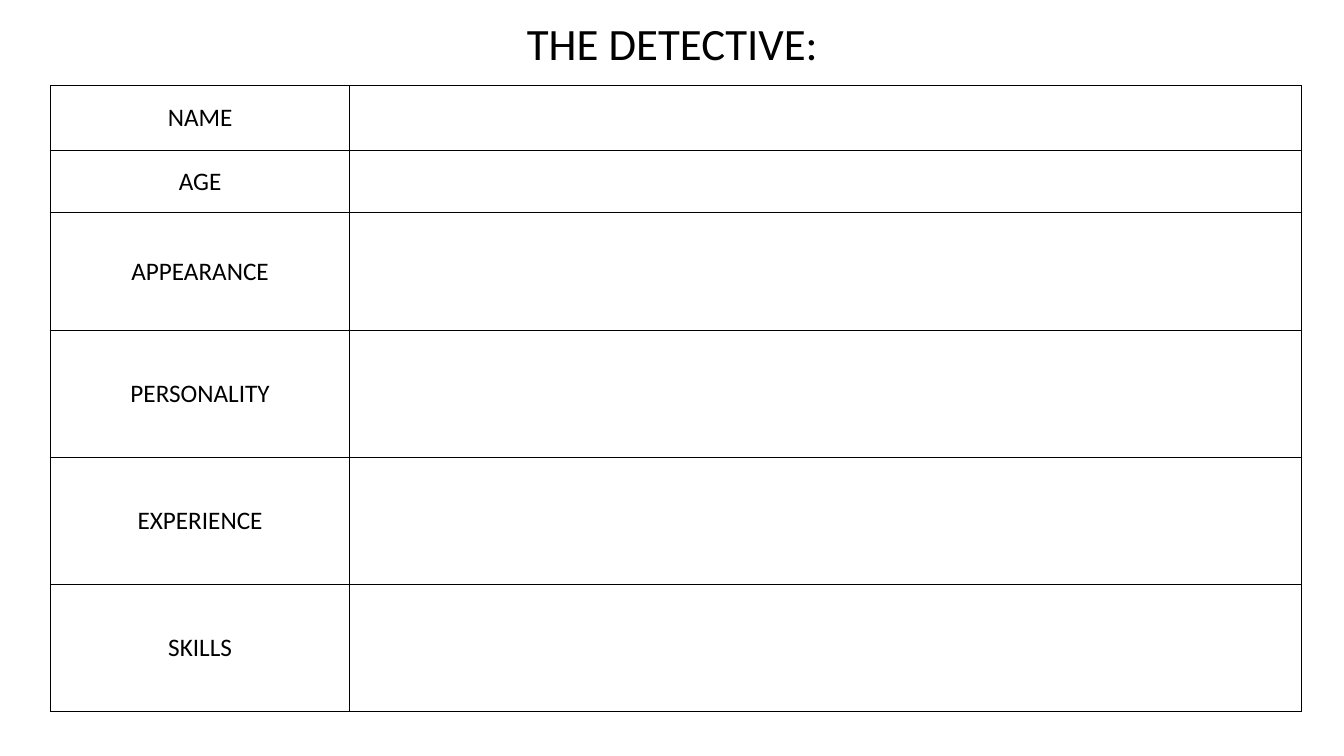
from lxml import etree
from pptx import Presentation
from pptx.dml.color import RGBColor
from pptx.enum.text import MSO_ANCHOR, PP_ALIGN
from pptx.oxml.ns import qn
from pptx.util import Inches, Pt

CENTER = PP_ALIGN.CENTER
MIDDLE = MSO_ANCHOR.MIDDLE

TITLE = "THE DETECTIVE:"
ROWS = [
    ("NAME", 0.64),
    ("AGE", 0.62),
    ("APPEARANCE", 1.17),
    ("PERSONALITY", 1.26),
    ("EXPERIENCE", 1.26),
    ("SKILLS", 1.26),
]
COLS = (2.97, 9.44)
LEFT, TOP = 0.5, 0.85
TITLE_BOX = (3.58, 0.11, 6.18, 0.64)

THEME = {
    "font": "Calibri",
    "ink": "000000",
    "title": 32,
    "label": 18,
    "line": 1,
}


def write(frame, text, size):
    para = frame.paragraphs[0]
    para.text = text
    para.alignment = CENTER
    font = para.font
    font.name = THEME["font"]
    font.size = Pt(size)
    font.color.rgb = RGBColor.from_string(THEME["ink"])


def rule(cell):
    """Draw a solid line on all four sides of an unfilled cell."""
    props = cell._tc.get_or_add_tcPr()
    for side in ("a:lnL", "a:lnR", "a:lnT", "a:lnB"):
        line = etree.SubElement(props, qn(side), w=str(Pt(THEME["line"])))
        fill = etree.SubElement(line, qn("a:solidFill"))
        etree.SubElement(fill, qn("a:srgbClr"), val=THEME["ink"])
    cell.fill.background()


def add_title(slide):
    box = slide.shapes.add_textbox(*map(Inches, TITLE_BOX))
    box.text_frame.word_wrap = True
    write(box.text_frame, TITLE, THEME["title"])


def add_form(slide):
    height = sum(tall for _, tall in ROWS)
    place = map(Inches, (LEFT, TOP, sum(COLS), height))
    table = slide.shapes.add_table(len(ROWS), len(COLS), *place).table
    table.first_row = table.horz_banding = False
    for col, wide in zip(table.columns, COLS):
        col.width = Inches(wide)
    for row, (label, tall) in zip(table.rows, ROWS):
        row.height = Inches(tall)
        for cell in row.cells:
            rule(cell)
        head = row.cells[0]
        head.vertical_anchor = MIDDLE
        write(head.text_frame, label, THEME["label"])


def main():
    deck = Presentation()
    deck.slide_width, deck.slide_height = Inches(13.33), Inches(7.5)
    slide = deck.slides.add_slide(deck.slide_layouts[6])
    add_title(slide)
    add_form(slide)
    deck.save("out.pptx")


if __name__ == "__main__":
    main()
